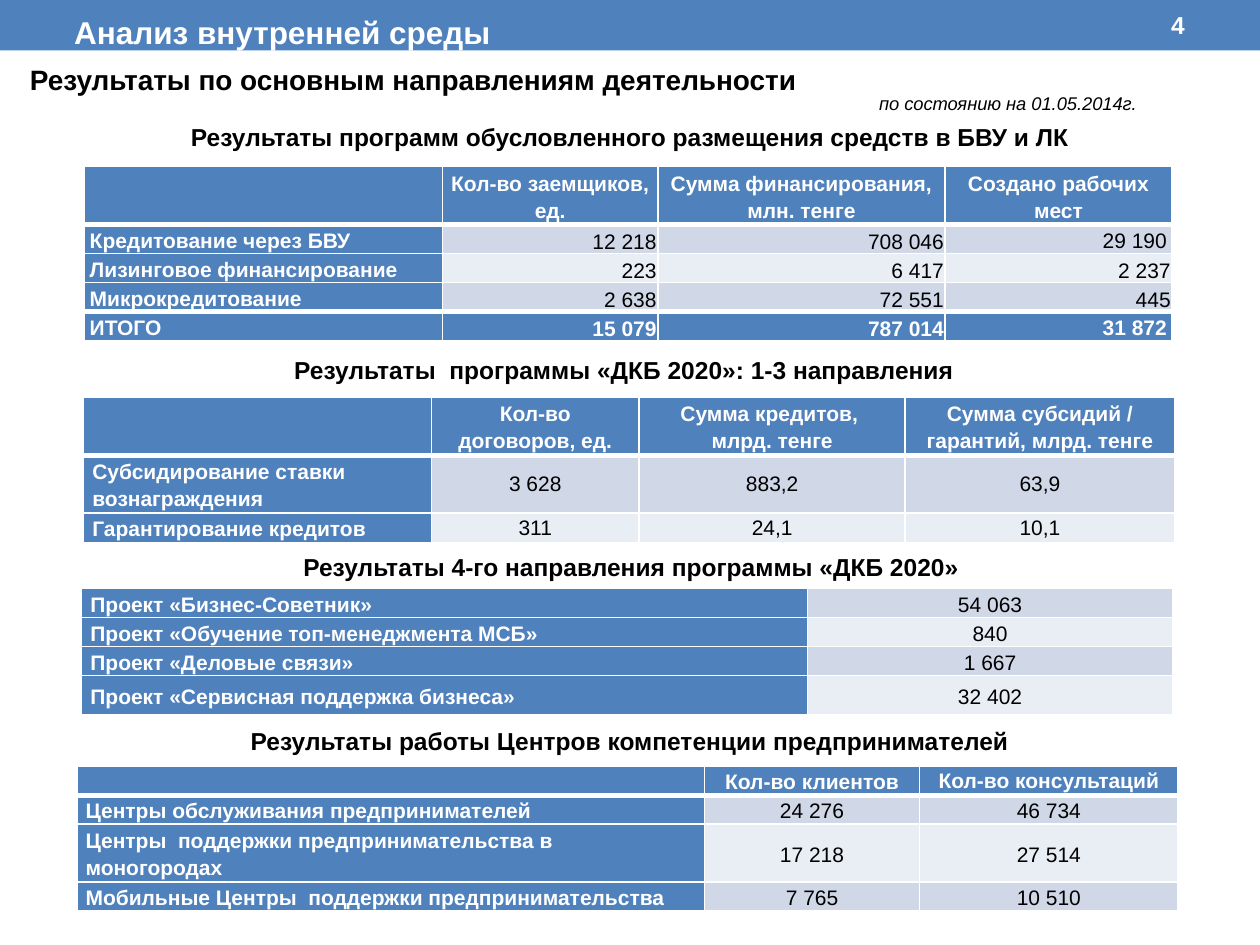
from lxml import etree
from pptx import Presentation
from pptx.dml.color import RGBColor
from pptx.enum import shapes, text
from pptx.oxml.ns import qn
from pptx.util import Pt

COLORS = {"blue": "4F81BD", "white": "FFFFFF", "black": "000000",
          "odd": "D0D8E8", "even": "E9EDF4"}
FONT = "Arial"
LEFT, CENTER = text.PP_ALIGN.LEFT, text.PP_ALIGN.CENTER
RIGHT, JUSTIFY = text.PP_ALIGN.RIGHT, text.PP_ALIGN.JUSTIFY
TOP, MIDDLE, BOTTOM = (text.MSO_ANCHOR.TOP, text.MSO_ANCHOR.MIDDLE,
                       text.MSO_ANCHOR.BOTTOM)
LINE, TWO_LINES = 16.6, 33  # row heights for one and two lines of text


def rgb(name):
    return RGBColor.from_string(COLORS[name])


def write(p, words, size, color, align=LEFT, spacing=None, **style):
    """Fill a paragraph with text in one style."""
    p.text = words
    p.alignment, p.line_spacing = align, spacing
    for r in p.runs:
        for key, value in {"name": FONT, "size": Pt(size), **style}.items():
            setattr(r.font, key, value)
        r.font.color.rgb = rgb(color)
    for br in p._p.findall(qn("a:br")):
        etree.SubElement(br, qn("a:rPr")).set("sz", str(size * 100))
    if not words:
        p._p.get_or_add_endParaRPr().set("sz", str(size * 100))


def add_bar(s):
    bar = s.shapes.add_shape(shapes.MSO_SHAPE.RECTANGLE, 0, 0, Pt(720), Pt(28.8))
    bar.shadow.inherit = False
    bar.fill.solid()
    bar.fill.fore_color.rgb = rgb("blue")
    bar.line.fill.background()


def add_label(s, box, words, size, color="black", align=CENTER,
              anchor=TOP, wrap=True, **style):
    tf = s.shapes.add_textbox(*map(Pt, box)).text_frame
    tf.word_wrap, tf.vertical_anchor = wrap, anchor
    write(tf.paragraphs[0], words, size, color, align, **style)
    return tf.paragraphs[0]


def add_border(cell, side, width):
    tc_pr = cell._tc.get_or_add_tcPr()
    ln = etree.SubElement(tc_pr, qn(f"a:ln{side}"), w=str(Pt(width)))
    fill = etree.SubElement(ln, qn("a:solidFill"))
    etree.SubElement(fill, qn("a:srgbClr"), val=COLORS["white"])


def fill_cell(cell, words, fill, bold, top, bottom, align, anchor=MIDDLE,
              spacing=1.15, inset=5):
    for side, width in zip("LRTB", (1, 1, top, bottom)):
        add_border(cell, side, width)
    cell.fill.solid()
    cell.fill.fore_color.rgb = rgb(fill)
    cell.vertical_anchor = anchor
    cell.margin_left = cell.margin_right = Pt(inset)
    cell.margin_top = cell.margin_bottom = 0
    write(cell.text_frame.paragraphs[0], words, 12,
          "white" if bold else "black", align, spacing, bold=bold)


def add_grid(s, left, top, cols, heights, rows, header=True, total=False,
             inset=5, label=None, value=None, special=None):
    """Table with blue labels, banded values and thick rules at header and total."""
    frame = s.shapes.add_table(len(rows), len(cols), Pt(left), Pt(top),
                               Pt(sum(cols)), Pt(sum(heights)))
    table = frame.table
    for col, width in zip(table.columns, cols):
        col.width = Pt(width)
    for row, height in zip(table.rows, heights):
        row.height = Pt(height)
    last = len(rows) - 1
    thick = ({1} if header else set()) | ({last} if total else set())
    for i, row in enumerate(rows):
        is_head = header and i == 0
        band = "even" if (i - header) % 2 else "odd"
        for j, words in enumerate(row):
            blue = is_head or j == 0 or (total and i == last)
            layout = {"align": CENTER, "inset": inset}
            if not is_head:
                layout.update((value if j else label) or {})
            layout.update((special or {}).get((i, j), {}))
            fill_cell(table.cell(i, j), words, "blue" if blue else band, blue,
                      3 if i in thick else 1, 3 if i + 1 in thick else 1, **layout)


def main():
    prs = Presentation()
    prs.slide_width, prs.slide_height = Pt(720), Pt(540)
    s = prs.slides.add_slide(prs.slide_layouts[6])

    # Title bar and page number
    add_bar(s)
    add_label(s, (600, 1.4, 84, 26), "4", 14, "white", RIGHT, MIDDLE, bold=True)
    title = add_label(s, (0, 3.6, 291, 29), "Анализ внутренней среды", 18, "white",
                      LEFT, MIDDLE, wrap=False, bold=True)
    title._p.get_or_add_pPr().set("indent", str(Pt(35.3)))

    # Subtitle and date
    add_label(s, (10, 32.4, 658, 26.6), "Результаты по основным направлениям деятельности",
              16, align=LEFT, bold=True)
    add_label(s, (484.6, 49, 183, 20), "по состоянию на 01.05.2014г.", 10.5, italic=True)

    # Section headings
    for left, top, width, words in [
        (31, 66.2, 658, "Результаты программ обусловленного размещения средств в БВУ и ЛК"),
        (47.5, 199.4, 622, "Результаты  программы «ДКБ 2020»: 1-3 направления "),
        (49.7, 311.8, 622, "Результаты 4-го направления программы «ДКБ 2020»"),
        (48.2, 411.1, 623.5, "Результаты работы Центров компетенции предпринимателей"),
    ]:
        add_label(s, (left, top, width, 24.5), words, 14, bold=True)

    # Placement of funds in banks and leasing companies
    created = {"anchor": MIDDLE, "spacing": 1.15, "inset": 2.9}
    add_grid(s, 48.4, 95.2, [204.5, 123, 164.2, 129.6], [TWO_LINES] + [LINE] * 4, [
        ["", "Кол-во заемщиков, ед.", "Сумма финансирования, млн. тенге",
         "Создано рабочих мест"],
        ["Кредитование через БВУ", "12 218", "708 046", "29 190"],
        ["Лизинговое финансирование", "223", "6 417", "2 237"],
        ["Микрокредитование", "2 638", "72 551", "445"],
        ["ИТОГО", "15 079", "787 014", "31 872"],
    ], total=True, inset=2.9, label={"align": LEFT},
        value={"align": RIGHT, "anchor": BOTTOM, "spacing": None, "inset": 0.7},
        special={(1, 3): created, (4, 3): created})

    # Directions 1-3
    add_grid(s, 47.8, 227, [198.7, 118.8, 152, 154], [TWO_LINES, TWO_LINES, LINE], [
        ["", "Кол-во договоров, ед.", "Сумма кредитов, \nмлрд. тенге",
         "Сумма субсидий / гарантий, млрд. тенге"],
        ["Субсидирование ставки вознаграждения", "3 628", "883,2", "63,9"],
        ["Гарантирование кредитов", "311", "24,1", "10,1"],
    ], label={"align": LEFT}, value={"spacing": None})

    # Direction 4
    add_grid(s, 46.7, 336.4, [414.7, 208.8], [LINE] * 3 + [22.3], [
        ["Проект «Бизнес-Советник»", "54 063"],
        ["Проект «Обучение топ-менеджмента МСБ»", "840"],
        ["Проект «Деловые связи» ", "1 667"],
        ["Проект «Сервисная поддержка бизнеса»", "32 402"],
    ], header=False, label={"align": JUSTIFY})

    # Competence centres
    add_grid(s, 43.9, 437.8, [358.6, 123.1, 147.6], [LINE, LINE, TWO_LINES, LINE], [
        ["", "Кол-во клиентов", "Кол-во консультаций"],
        ["Центры обслуживания предпринимателей", "24 276", "46 734"],
        ["Центры  поддержки предпринимательства в моногородах", "17 218", "27 514"],
        ["Мобильные Центры  поддержки предпринимательства", "7 765", "10 510"],
    ], label={"align": JUSTIFY},
        special={(0, 2): {"anchor": TOP}, (2, 0): {"align": LEFT}})

    prs.save("out.pptx")


if __name__ == "__main__":
    main()
